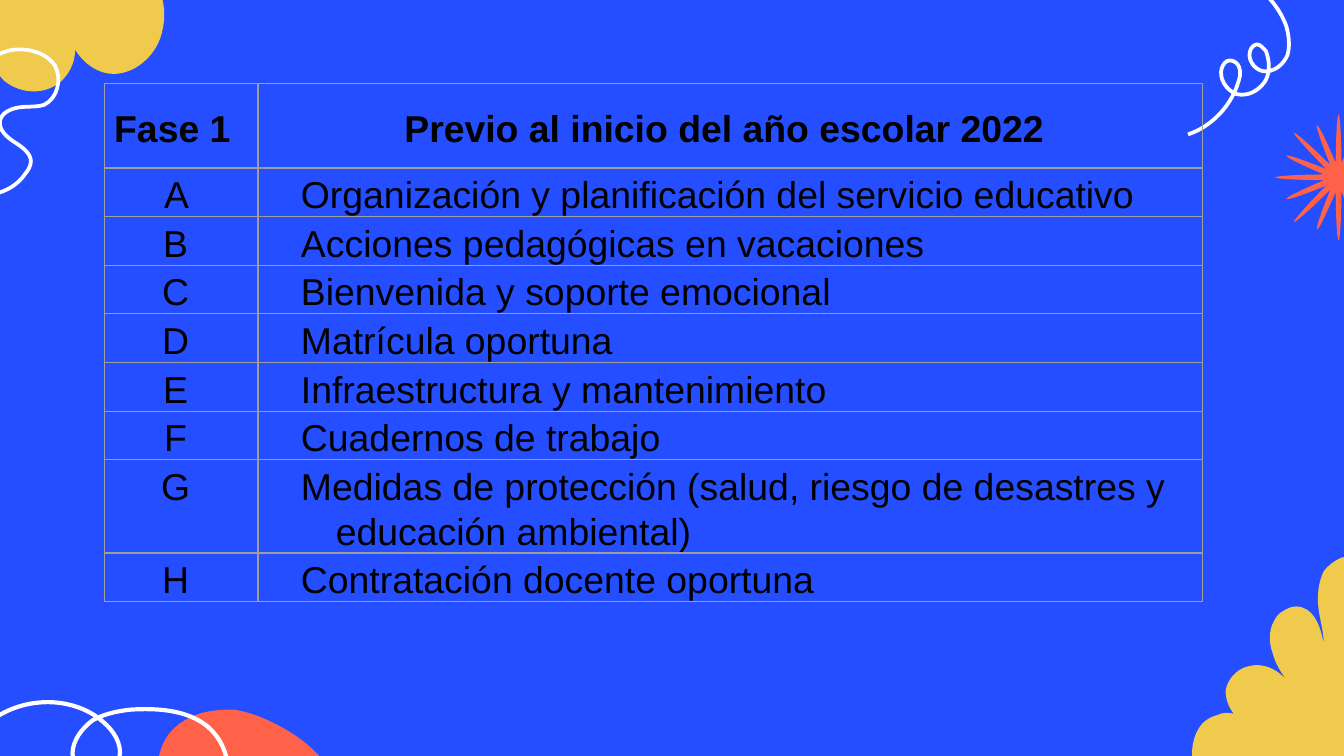
from dataclasses import dataclass
from math import cos, sin, pi

from pptx import Presentation
from pptx.dml.color import RGBColor
from pptx.enum.text import MSO_ANCHOR, PP_ALIGN
from pptx.oxml import parse_xml
from pptx.oxml.ns import nsdecls, qn
from pptx.oxml.xmlchemy import OxmlElement
from pptx.util import Inches, Pt

LEFT, MID = PP_ALIGN.LEFT, PP_ALIGN.CENTER
TOP, CENTER = MSO_ANCHOR.TOP, MSO_ANCHOR.MIDDLE


@dataclass(frozen=True)
class Theme:
    back: str = "244EFF"
    gold: str = "F0CA4D"
    coral: str = "FF6248"
    white: str = "FFFFFF"
    ink: str = "000000"
    grid: str = "9E9E9E"
    font: str = "Arial"
    size: float = 20
    rule: float = 0.75


THEME = Theme()

CLOUD = [
    0.05, -0.77, -0.03, -0.77, -0.09, -0.75, -0.15, -0.71,
    -0.35, -0.55, -0.47, -0.17, -0.52, 0.07, -0.54, 0.15, -0.55, 0.24, -0.53, 0.32,
    -0.51, 0.41, -0.45, 0.49, -0.36, 0.5, -0.35, 0.51, -0.34, 0.51, -0.32, 0.51,
    -0.25, 0.51, -0.18, 0.47, -0.14, 0.42, -0.11, 0.38, -0.08, 0.34, -0.06, 0.3,
    -0.08, 0.41, -0.05, 0.52, 0.03, 0.6, 0.09, 0.65, 0.17, 0.68, 0.25, 0.68,
    0.32, 0.68, 0.38, 0.66, 0.44, 0.62, 0.51, 0.56, 0.56, 0.47, 0.56, 0.37,
    0.62, 0.47, 0.73, 0.55, 0.84, 0.55, 0.85, 0.55, 0.85, 0.55, 0.86, 0.55,
    1.03, 0.54, 1.18, 0.39, 1.21, 0.22, 1.25, 0.05, 1.19, -0.13, 1.08, -0.27,
    0.97, -0.4, 0.82, -0.5, 0.66, -0.57, 0.5, -0.65, 0.25, -0.77, 0.05, -0.77]
LEAF = [
    9.82, 6.01, 9.87, 5.99, 9.93, 5.97, 9.98, 5.94,
    10.16, 5.83, 10.27, 5.63, 10.32, 5.43, 10.41, 5.06, 10.41, 4.63, 10.23, 4.3,
    10.19, 4.23, 10.15, 4.17, 10.08, 4.15, 10.05, 4.14, 10.02, 4.14, 9.98, 4.15,
    9.93, 4.17, 9.88, 4.21, 9.85, 4.25, 9.81, 4.33, 9.8, 4.43, 9.81, 4.52,
    9.82, 4.61, 9.85, 4.7, 9.85, 4.79, 9.83, 4.68, 9.79, 4.55, 9.69, 4.52,
    9.66, 4.51, 9.63, 4.51, 9.6, 4.52, 9.55, 4.54, 9.5, 4.57, 9.48, 4.62,
    9.44, 4.69, 9.44, 4.78, 9.47, 4.86, 9.49, 4.94, 9.53, 5, 9.58, 5.07,
    9.52, 4.99, 9.42, 4.94, 9.33, 4.95, 9.31, 4.95, 9.3, 4.95, 9.28, 4.96,
    9.2, 4.98, 9.13, 5.06, 9.12, 5.14, 9.12, 5.2, 9.14, 5.26, 9.18, 5.31,
    9.14, 5.3, 9.1, 5.3, 9.06, 5.32, 9.02, 5.33, 8.98, 5.35, 8.95, 5.38,
    8.87, 5.47, 8.85, 5.61, 8.89, 5.73, 8.94, 5.85, 9.04, 5.94, 9.15, 5.99,
    9.27, 6.04, 9.39, 6.05, 9.52, 6.05, 9.62, 6.05, 9.72, 6.04, 9.82, 6.01]
LOOP = [
    8.84, 1, 9.02, 0.94, 9.17, 0.78, 9.22, 0.59, 9.23, 0.56, 9.23, 0.53, 9.22, 0.5,
    9.21, 0.47, 9.18, 0.45, 9.15, 0.45, 9.12, 0.45, 9.1, 0.48, 9.09, 0.51,
    9.07, 0.58, 9.12, 0.67, 9.2, 0.7, 9.28, 0.72, 9.36, 0.68, 9.41, 0.61,
    9.45, 0.55, 9.45, 0.46, 9.42, 0.38, 9.4, 0.36, 9.38, 0.33, 9.35, 0.33,
    9.33, 0.33, 9.32, 0.35, 9.31, 0.36, 9.27, 0.43, 9.33, 0.52, 9.4, 0.53,
    9.48, 0.54, 9.55, 0.48, 9.58, 0.41, 9.6, 0.34, 9.59, 0.26, 9.57, 0.19,
    9.49, -0.02, 9.29, -0.19, 9.07, -0.22]
CURL = [
    -0.26, 1.43, -0.1, 1.49, 0.1, 1.43, 0.19, 1.29, 0.21, 1.27, 0.23, 1.23, 0.23, 1.2,
    0.23, 1.14, 0.16, 1.09, 0.11, 1.06, 0.05, 1.02, -0.01, 0.97, 0, 0.9,
    0.01, 0.84, 0.08, 0.81, 0.14, 0.8, 0.21, 0.79, 0.27, 0.8, 0.33, 0.78,
    0.43, 0.73, 0.46, 0.59, 0.41, 0.49, 0.35, 0.4, 0.23, 0.36, 0.11, 0.37,
    0, 0.38, -0.09, 0.45, -0.18, 0.52]
STONE = [
    2.47, 5.78, 2.39, 5.53, 1.95, 5.3, 1.73, 5.28, 1.62, 5.28, 1.51, 5.29, 1.41, 5.34,
    1.31, 5.39, 1.23, 5.47, 1.2, 5.57, 1.17, 5.64, 1.18, 5.71, 1.2, 5.78,
    1.23, 5.88, 1.29, 5.97, 1.37, 6.03, 1.51, 6.14, 1.69, 6.18, 1.87, 6.19,
    2.02, 6.2, 2.18, 6.19, 2.31, 6.1, 2.46, 6, 2.5, 5.89, 2.47, 5.78]
WAVE = [
    1.65, 5.86, 1.75, 5.7, 1.66, 5.48, 1.51, 5.38, 1.36, 5.28, 1.16, 5.27, 0.98, 5.28,
    0.88, 5.29, 0.78, 5.31, 0.69, 5.36, 0.61, 5.42, 0.54, 5.51, 0.54, 5.61,
    0.55, 5.71, 0.64, 5.81, 0.74, 5.8, 0.84, 5.78, 0.91, 5.66, 0.89, 5.56,
    0.87, 5.46, 0.79, 5.38, 0.7, 5.32, 0.46, 5.17, 0.12, 5.2, -0.1, 5.39,
    -0.32, 5.58, -0.38, 5.92, -0.25, 6.17]

HEAD = ("Fase 1", "Previo al inicio del año escolar 2022 ")
ITEMS = [
    "Organización y planificación del servicio educativo",
    "Acciones pedagógicas en vacaciones",
    "Bienvenida y soporte emocional",
    "Matrícula oportuna",
    "Infraestructura y mantenimiento",
    "Cuadernos de trabajo",
    "Medidas de protección (salud, riesgo de desastres y educación ambiental)",
    "Contratación docente oportuna",
]


def color(code):
    return RGBColor.from_string(code)


def burst(x, y, rays=16):
    step = 2 * pi / rays
    inner, side = 0.11 * cos(step / 2), 0.11 * sin(step / 2)
    flat = []
    for i in range(rays):
        tip = 0.42 if i % 2 else 0.47
        ray = [(inner, -side), (0.32, -0.02), (tip, -0.01), (tip, 0),
               (tip, 0.01), (0.32, 0.02), (inner, side)]
        c, s = cos(i * step), sin(i * step)
        for u, v in ray[1:] if i else ray:
            flat += [x + u * c - v * s, y + u * s + v * c]
    return flat


def curve(slide, box, flat, fill=None, line=None, width=2):
    dots = [(Inches(box[0] + x), Inches(box[1] + y))
            for x, y in zip(flat[::2], flat[1::2])]
    pen = slide.shapes.build_freeform(*dots[0], scale=1.0)
    pen.add_line_segments(dots[1:], close=fill is not None)
    shape = pen.convert_to_shape()
    shape.shadow.inherit = False
    trail = shape.element.xpath(".//a:path")[0]
    legs = trail.findall(qn("a:lnTo"))
    for i in range(0, len(legs), 3):
        bend = OxmlElement("a:cubicBezTo")
        legs[i].addprevious(bend)
        for leg in legs[i:i + 3]:
            bend.append(leg[0])
            trail.remove(leg)
    if fill:
        shape.fill.solid()
        shape.fill.fore_color.rgb = color(fill)
        shape.line.fill.background()
    else:
        shape.fill.background()
        shape.line.color.rgb = color(line)
        shape.line.width = Pt(width)


def decor(slide, box):
    curve(slide, box, CLOUD, fill=THEME.gold)
    curve(slide, box, LEAF, fill=THEME.gold)
    curve(slide, box, LOOP, line=THEME.white)
    curve(slide, box, CURL, line=THEME.white)
    curve(slide, box, STONE, fill=THEME.coral)
    curve(slide, box, burst(9.96, 1.32), fill=THEME.coral)
    curve(slide, box, WAVE, line=THEME.white, width=2.25)


def fill_cell(cell, text, align, margin, head):
    cell.margin_left, cell.margin_top = Inches(0.07), Inches(0.03)
    cell.margin_right, cell.margin_bottom = Inches(0.08), 0
    cell.vertical_anchor = CENTER if head else TOP
    cell.fill.background()
    cell.text_frame.text = text
    para = cell.text_frame.paragraphs[0]
    para.alignment = align
    para.line_spacing, para.space_after = 1.07, Pt(2.7)
    props = para._p.get_or_add_pPr()
    props.set("marL", str(Inches(margin)))
    props.set("indent", str(Inches(-0.26)))
    font = para.runs[0].font
    font.name, font.size, font.bold = THEME.font, Pt(THEME.size), head
    font.color.rgb = color(THEME.ink)
    frame = cell._tc.get_or_add_tcPr()
    for i, side in enumerate("LRTB"):
        frame.insert(i, parse_xml(
            f'<a:ln{side} {nsdecls("a")} w="{Pt(THEME.rule)}"><a:solidFill>'
            f'<a:srgbClr val="{THEME.grid}"/></a:solidFill></a:ln{side}>'))


def phases(slide, box):
    rows = [HEAD] + [(f"{key} ", text) for key, text in zip("ABCDEFGH", ITEMS)]
    grid = slide.shapes.add_table(len(rows), 2, *map(Inches, box)).table
    grid.first_row = grid.horz_banding = False
    grid.columns[0].width = Inches(1.14)
    grid.columns[1].width = Inches(box[2] - 1.14)
    tall = {0: 0.63, 7: 0.62}
    for i, (key, text) in enumerate(rows):
        head = i == 0
        grid.rows[i].height = Inches(tall.get(i, 0.36))
        fill_cell(grid.cell(i, 0), key, LEFT if head else MID, 0.04 if head else 0, head)
        fill_cell(grid.cell(i, 1), text, MID if head else LEFT, 0 if head else 0.51, head)


def main():
    deck = Presentation()
    deck.slide_width, deck.slide_height = Inches(10), Inches(10 * 9 / 16)
    slide = deck.slides.add_slide(deck.slide_layouts[6])
    slide.background.fill.solid()
    slide.background.fill.fore_color.rgb = color(THEME.back)
    decor(slide, (0, 0))
    phases(slide, (0.78, 0.62, 8.17, 3.94))
    deck.save("out.pptx")


if __name__ == "__main__":
    main()
